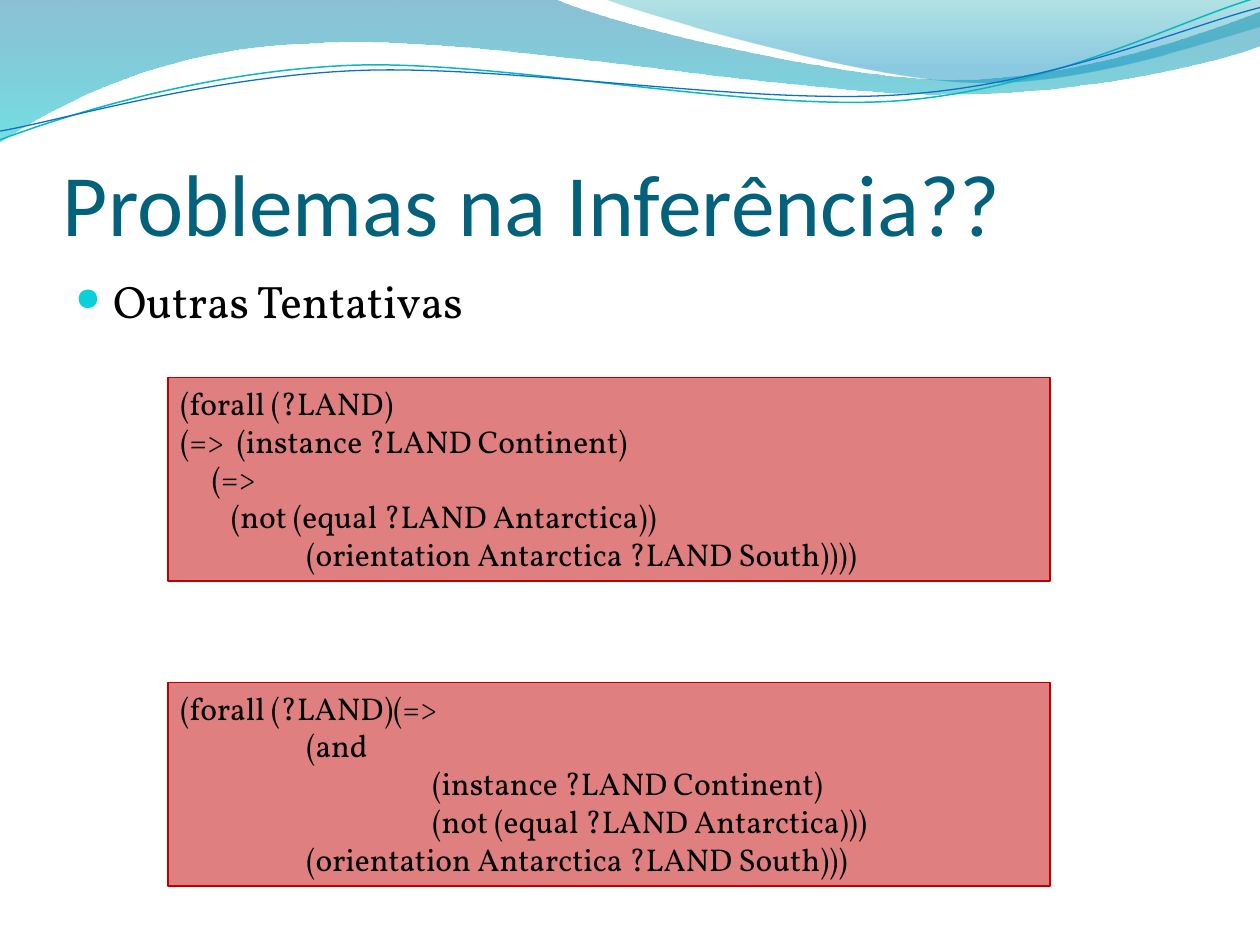
from lxml import etree
from pptx import Presentation
from pptx.dml.color import RGBColor
from pptx.enum.shapes import MSO_SHAPE
from pptx.enum.text import MSO_ANCHOR, MSO_AUTO_SIZE, PP_ALIGN
from pptx.oxml.ns import qn
from pptx.util import Pt


def rgb(value):
    return RGBColor.from_string(value)


def set_opacity(color_parent, percent):
    """Make the colour held by an XML element partly transparent."""
    color = color_parent.find(qn("a:srgbClr"))
    etree.SubElement(color, qn("a:alpha"), val=str(percent * 1000))


prs = Presentation()
prs.slide_width, prs.slide_height = Pt(720), Pt(540)
slide = prs.slides.add_slide(prs.slide_layouts[6])
shapes = slide.shapes

# Waves: each segment is an end point (2 numbers) or a Bezier curve (6 numbers)
waves = [
    {"segments": [(0, 0), (316.8, -0.7),
                  (342.7, 12.2, 478.1, 45.4, 545.8, 45.4),
                  (614.2, 45.4, 689.8, 18.7, 720, 6.5), (720.7, 25.9),
                  (707.8, 31.7, 626.4, 54.7, 537.1, 54),
                  (447.8, 54, 275, 20.2, 185, 24.5),
                  (92.9, 25.9, 33.1, 59.8, -0.7, 81.4)],
     "gradient": [(0, "0074A1", 45), (1, "00C6CF", 55)]},
    {"segments": [(344.9, -0.7),
                  (366.5, 7.9, 491, 44.6, 553.7, 46.8),
                  (616.3, 49.7, 691.9, 23, 720, 15.1), (720, 0)],
     "gradient": [(0, "00A1A9", 30), (0.8, "008BBF", 45)]},
    {"segments": [(0, 79.9),
                  (34.6, 67, 113.8, 41, 199.4, 37.4),
                  (284.4, 33.8, 427, 64.1, 513.4, 57.6),
                  (599.8, 51.1, 675.4, 10.8, 718.6, -1.4)],
     "line": ("0AB8BF", 0.85)},
    {"segments": [(0, 74.9),
                  (33.8, 69.1, 118.1, 43.9, 203.8, 40.3),
                  (290.2, 36.7, 429.8, 60.5, 516.2, 54),
                  (601.9, 48.2, 677.5, 15.1, 720, 4.3)],
     "line": ("0F6FC6", 0.75)},
]
for wave in waves:
    segments = wave["segments"]
    ends = [(Pt(segment[-2]), Pt(segment[-1])) for segment in segments]
    builder = shapes.build_freeform(*ends[0])
    builder.add_line_segments(ends[1:], close="gradient" in wave)
    ribbon = builder.convert_to_shape()
    ribbon.shadow.inherit = False

    # Bend the straight segments that have control points
    straight_lines = list(ribbon.element.spPr.iter(qn("a:lnTo")))
    for straight, segment in zip(straight_lines, segments[1:]):
        if len(segment) == 6:
            curve = etree.Element(qn("a:cubicBezTo"))
            for x, y in zip(segment[::2], segment[1::2]):
                etree.SubElement(curve, qn("a:pt"), x=str(Pt(x) - ribbon.left),
                                 y=str(Pt(y) - ribbon.top))
            straight.getparent().replace(straight, curve)

    if "gradient" in wave:
        ribbon.line.fill.background()
        ribbon.fill.gradient()
        ribbon.fill.gradient_angle = 270
        stop_elements = ribbon.element.spPr.iter(qn("a:gs"))
        for stop, element, (position, color, opacity) in zip(
                ribbon.fill.gradient_stops, stop_elements, wave["gradient"]):
            stop.position = position
            stop.color.rgb = rgb(color)
            set_opacity(element, opacity)
    else:
        color, width = wave["line"]
        ribbon.fill.background()
        ribbon.line.color.rgb = rgb(color)
        ribbon.line.width = Pt(width)

# Title and bullet
headings = [
    {"text": "Problemas na Inferência??", "at": (36, 55.4, 648, 90),
     "font": {"name": "Calibri", "size": Pt(50)}, "color": "04617B",
     "frame": {"vertical_anchor": MSO_ANCHOR.BOTTOM, "margin_left": 0,
               "margin_right": 0, "margin_bottom": 0}},
    {"text": "Outras Tentativas", "at": (36, 152.6, 648, 345.6),
     "font": {"name": "Vollkorn", "size": Pt(26)}, "color": "000000",
     "frame": {"vertical_anchor": MSO_ANCHOR.TOP}},
]
for heading in headings:
    frame = shapes.add_textbox(*map(Pt, heading["at"])).text_frame
    frame.word_wrap = True
    for name, value in heading["frame"].items():
        setattr(frame, name, value)
    paragraph = frame.paragraphs[0]
    run = paragraph.add_run()
    run.text = heading["text"]
    for name, value in heading["font"].items():
        setattr(run.font, name, value)
    run.font.color.rgb = rgb(heading["color"])

paragraph.space_before = Pt(5.2)
bullet = paragraph._p.get_or_add_pPr()
bullet.set("marL", str(Pt(21.6)))
bullet.set("indent", str(Pt(-21.6)))
bullet_color = etree.SubElement(bullet, qn("a:buClr"))
etree.SubElement(bullet_color, qn("a:srgbClr"), val="0BD0D9")
etree.SubElement(bullet, qn("a:buSzPct"), val="70000")
etree.SubElement(bullet, qn("a:buChar"), char="●")

# Axioms: (indent, line of code)
axioms = [
    (215.8, [(0, "(forall (?LAND)"),
             (0, "(=>  (instance ?LAND Continent)"),
             (18, "(=>"),
             (29, "(not (equal ?LAND Antarctica))"),
             (72, "(orientation Antarctica ?LAND South))))")]),
    (390, [(0, "(forall (?LAND)(=>"),
           (72, "(and"),
           (144, "(instance ?LAND Continent)"),
           (144, "(not (equal ?LAND Antarctica)))"),
           (72, "(orientation Antarctica ?LAND South)))")]),
]
for top, code_lines in axioms:
    axiom = shapes.add_shape(MSO_SHAPE.RECTANGLE, Pt(96), Pt(top), Pt(504), Pt(116.3))
    axiom.shadow.inherit = False
    axiom.fill.solid()
    axiom.fill.fore_color.rgb = rgb("C00000")
    set_opacity(axiom.element.spPr.find(qn("a:solidFill")), 50)
    axiom.line.color.rgb = rgb("C00000")
    axiom.line.width = Pt(0.75)
    frame = axiom.text_frame
    frame.word_wrap = True
    frame.auto_size = MSO_AUTO_SIZE.SHAPE_TO_FIT_TEXT
    frame.vertical_anchor = MSO_ANCHOR.TOP
    frame.text = "\n".join(code for _, code in code_lines)
    for paragraph, (indent, _) in zip(frame.paragraphs, code_lines):
        paragraph.alignment = PP_ALIGN.LEFT
        paragraph._p.get_or_add_pPr().set("marL", str(Pt(indent)))
        font = paragraph.runs[0].font
        font.name = "Vollkorn"
        font.size = Pt(18)
        font.color.rgb = rgb("000000")

prs.save("out.pptx")
